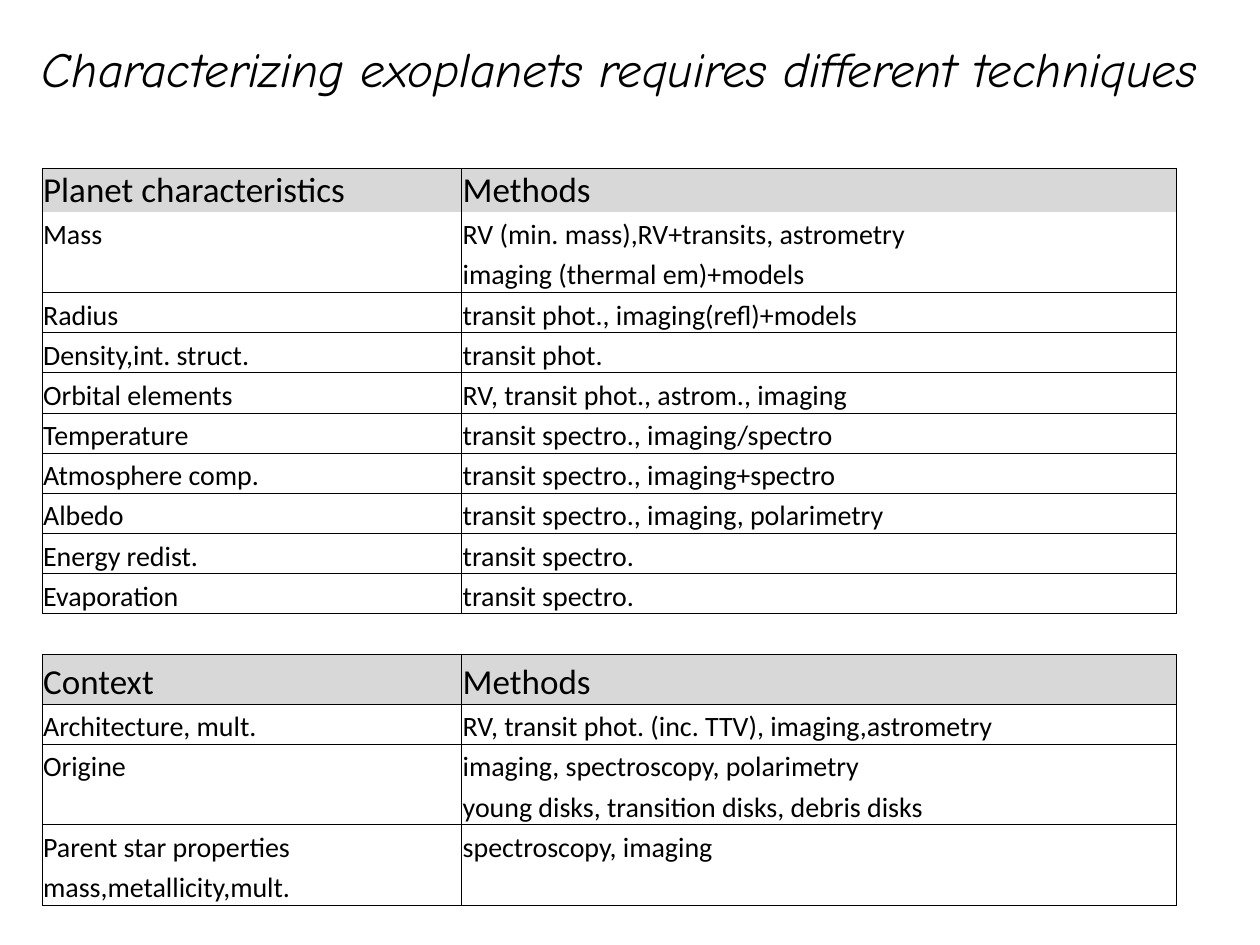
from pptx import Presentation
from pptx.dml.color import RGBColor
from pptx.enum.text import MSO_ANCHOR, MSO_AUTO_SIZE, PP_ALIGN
from pptx.oxml import parse_xml
from pptx.oxml.ns import nsdecls
from pptx.util import Cm, Pt

BLACK = "000000"
HEADER_GRAY = "D8D8D8"
ROW_HEIGHT = 0.81
HEADER_HEIGHTS = {0: 0.88, 12: 1.01}
GAP_ROW = 11
JOINED_BELOW = {0, 1, 14, 16}

ROWS = [
    ("Planet characteristics", "Methods"),
    ("Mass", "RV (min. mass),RV+transits, astrometry"),
    ("", "imaging (thermal em)+models"),
    ("Radius", "transit phot., imaging(refl)+models"),
    ("Density,int. struct.", "transit phot."),
    ("Orbital elements", "RV, transit phot., astrom., imaging"),
    ("Temperature", "transit spectro., imaging/spectro"),
    ("Atmosphere comp.", "transit spectro., imaging+spectro"),
    ("Albedo", "transit spectro., imaging, polarimetry"),
    ("Energy redist.", "transit spectro."),
    ("Evaporation", "transit spectro."),
    ("", ""),
    ("Context", "Methods"),
    ("Architecture, mult.", "RV, transit phot. (inc. TTV), imaging,astrometry"),
    ("Origine", "imaging, spectroscopy, polarimetry"),
    ("", "young disks, transition disks, debris disks"),
    ("Parent star properties", "spectroscopy, imaging"),
    ("mass,metallicity,mult.", ""),
]


def color(value):
    return RGBColor.from_string(value)


def write(frame, text, *, size, font="Calibri", italic=False, align=PP_ALIGN.LEFT):
    para = frame.paragraphs[0]
    para.alignment = align
    if not text:
        return
    span = para.add_run()
    span.text = text
    span.font.name = font
    span.font.size = Pt(size)
    span.font.italic = italic
    span.font.color.rgb = color(BLACK)


def set_borders(cell, visible):
    properties = cell._tc.get_or_add_tcPr()
    for position, side in enumerate("LRTB"):
        if side in visible:
            paint = f'<a:solidFill><a:srgbClr val="{BLACK}"/></a:solidFill>'
        else:
            paint = "<a:noFill/>"
        line = f'<a:ln{side} {nsdecls("a")} w="{Pt(0.5)}">{paint}</a:ln{side}>'
        properties.insert(position, parse_xml(line))


def visible_sides(row):
    sides = "" if row == GAP_ROW else "LR"
    if row - 1 not in JOINED_BELOW:
        sides += "T"
    if row not in JOINED_BELOW:
        sides += "B"
    return sides


def format_cell(cell, text, row):
    header = row in HEADER_HEIGHTS
    cell.vertical_anchor = MSO_ANCHOR.BOTTOM
    cell.margin_left = cell.margin_right = cell.margin_top = Cm(0.02)
    cell.margin_bottom = 0
    if header:
        cell.fill.solid()
        cell.fill.fore_color.rgb = color(HEADER_GRAY)
    else:
        cell.fill.background()
    set_borders(cell, visible_sides(row))
    write(cell.text_frame, text, size=20 if header else 16)


def add_title(page, left, top, width, height):
    box = page.shapes.title
    box.left, box.top, box.width, box.height = left, top, width, height
    frame = box.text_frame
    frame.word_wrap = True
    frame.auto_size = MSO_AUTO_SIZE.NONE
    frame.vertical_anchor = MSO_ANCHOR.MIDDLE
    write(frame, "Characterizing exoplanets requires different techniques",
          size=28, font="Comic Neue", italic=True, align=PP_ALIGN.CENTER)


def add_methods_table(page, left, top, width):
    heights = [Cm(HEADER_HEIGHTS.get(row, ROW_HEIGHT)) for row in range(len(ROWS))]
    table = page.shapes.add_table(len(ROWS), 2, left, top, width, sum(heights)).table
    table.first_row = table.horz_banding = False
    table.columns[0].width = int(width * 0.37)
    table.columns[1].width = width - table.columns[0].width
    for row, texts in enumerate(ROWS):
        table.rows[row].height = heights[row]
        for column, text in enumerate(texts):
            format_cell(table.cell(row, column), text, row)


def main():
    deck = Presentation()
    deck.slide_width, deck.slide_height = Cm(25.4), Cm(19.05)
    page = deck.slides.add_slide(deck.slide_layouts[5])
    add_title(page, Cm(0), Cm(0), Cm(24.97), Cm(2.75))
    add_methods_table(page, Cm(0.85), Cm(3.39), Cm(22.86))
    deck.save("out.pptx")


if __name__ == "__main__":
    main()
